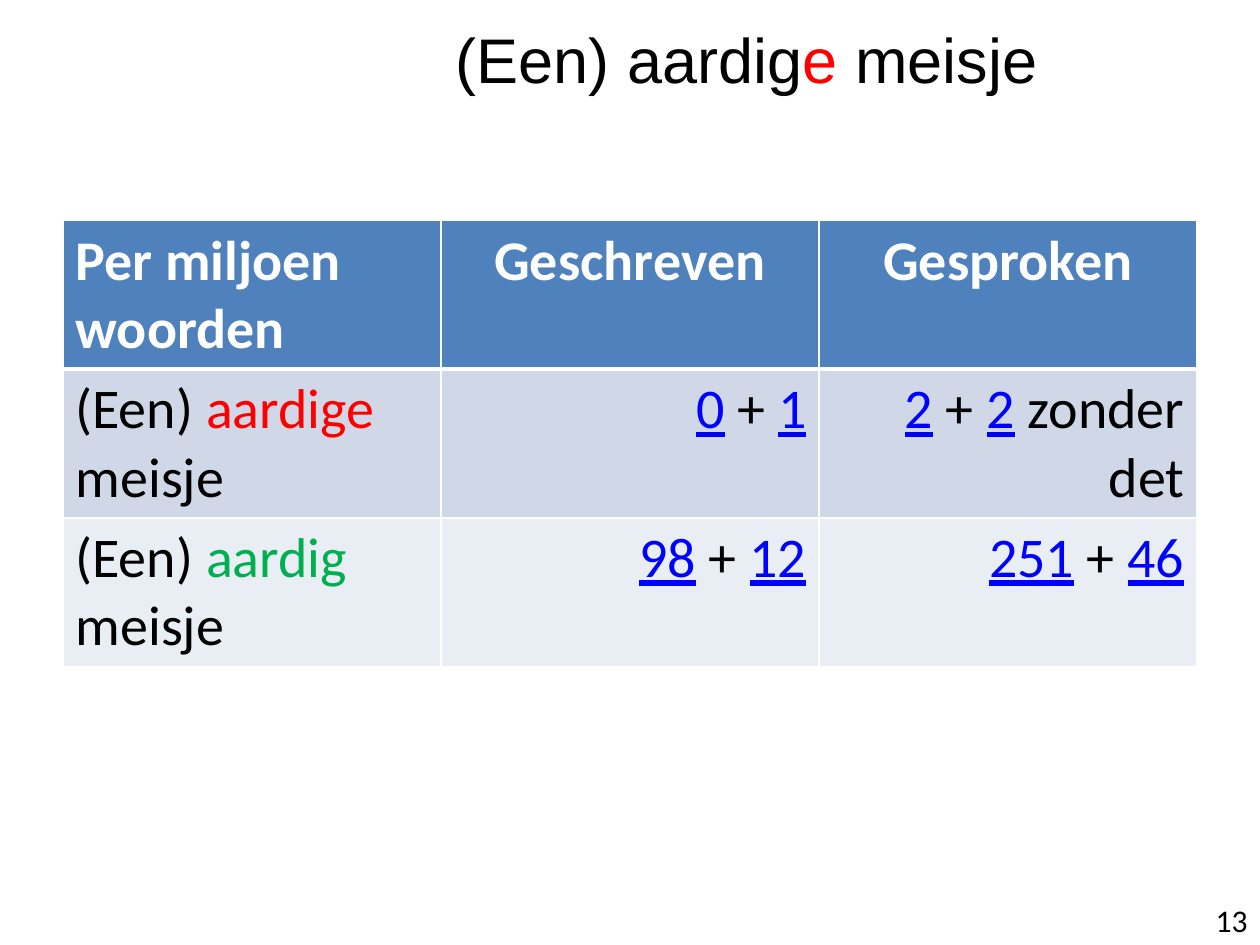
from lxml import etree
from pptx import Presentation
from pptx.dml.color import RGBColor
from pptx.enum.text import MSO_ANCHOR, PP_ALIGN
from pptx.oxml.ns import qn
from pptx.util import Inches, Pt

LEFT, CENTER, RIGHT = PP_ALIGN.LEFT, PP_ALIGN.CENTER, PP_ALIGN.RIGHT
MIDDLE, TOP = MSO_ANCHOR.MIDDLE, MSO_ANCHOR.TOP
BLACK, WHITE, RED, GREEN, BLUE = "000000", "FFFFFF", "FF0000", "00B050", "0000FF"

TITLE = [("(Een) aardig", BLACK), ("e", RED), (" meisje", BLACK)]
PAGE_NUMBER = [("13", BLACK)]
HEADINGS = ["Per miljoen woorden", "Geschreven", "Gesproken"]
COUNTS = [
    ("aardige", RED, ("0", "1", ""), ("2", "2", " zonder det")),
    ("aardig", GREEN, ("98", "12", ""), ("251", "46", "")),
]
ROW_FILLS = ["4F81BD", "D0D8E8", "E9EDF4"]
COLUMN_WIDTH, ROW_HEIGHT = 3, 1.18


def rgb(color):
    return RGBColor.from_string(color)


def write(frame, parts, size, font, align, bold=False):
    paragraph = frame.paragraphs[0]
    paragraph.alignment = align
    for text, color in parts:
        run = paragraph.add_run()
        run.text = text
        run.font.size = Pt(size)
        run.font.name = font
        run.font.bold = bold
        run.font.underline = color == BLUE
        run.font.color.rgb = rgb(color)


def add_text(slide, box, parts, size, font, align, anchor):
    frame = slide.shapes.add_textbox(*map(Inches, box)).text_frame
    frame.word_wrap = True
    frame.vertical_anchor = anchor
    write(frame, parts, size, font, align)


def add_borders(cell, widths):
    properties = cell._tc.get_or_add_tcPr()
    for position, (side, width) in enumerate(widths.items()):
        line = etree.Element(qn(f"a:{side}"), w=str(Pt(width)))
        fill = etree.SubElement(line, qn("a:solidFill"))
        etree.SubElement(fill, qn("a:srgbClr"), val=WHITE)
        properties.insert(position, line)


def count_parts(first, second, note):
    parts = [(first, BLUE), (" + ", BLACK), (second, BLUE)]
    return parts + [(note, BLACK)] if note else parts


def table_rows():
    rows = [[[(heading, WHITE)] for heading in HEADINGS]]
    for word, color, written, spoken in COUNTS:
        phrase = [("(Een) ", BLACK), (word, color), (" meisje", BLACK)]
        rows.append([phrase, count_parts(*written), count_parts(*spoken)])
    return rows


def add_counts_table(slide):
    rows = table_rows()
    table = slide.shapes.add_table(
        len(rows), len(HEADINGS), Inches(0.5), Inches(1.75),
        Inches(COLUMN_WIDTH * len(HEADINGS)), Inches(ROW_HEIGHT * len(rows))).table
    for column in table.columns:
        column.width = Inches(COLUMN_WIDTH)
    for r, row in enumerate(rows):
        table.rows[r].height = Inches(ROW_HEIGHT)
        header = r == 0
        for c, parts in enumerate(row):
            cell = table.cell(r, c)
            cell.fill.solid()
            cell.fill.fore_color.rgb = rgb(ROW_FILLS[r])
            add_borders(cell, {"lnL": 1, "lnR": 1, "lnT": 3 if r == 1 else 1,
                               "lnB": 3 if header else 1})
            align = LEFT if c == 0 else CENTER if header else RIGHT
            write(cell.text_frame, parts, 32, "Calibri", align, bold=header)


def main():
    deck = Presentation()
    deck.slide_width, deck.slide_height = Inches(10), Inches(7.5)
    slide = deck.slides.add_slide(deck.slide_layouts[6])
    add_text(slide, (1.85, 0, 8.15, 0.92), TITLE, 36, "Arial", CENTER, MIDDLE)
    add_counts_table(slide)
    add_text(slide, (8.94, 7.1, 1.06, 0.4), PAGE_NUMBER, 18, "Calibri", RIGHT, TOP)
    deck.save("out.pptx")


if __name__ == "__main__":
    main()
